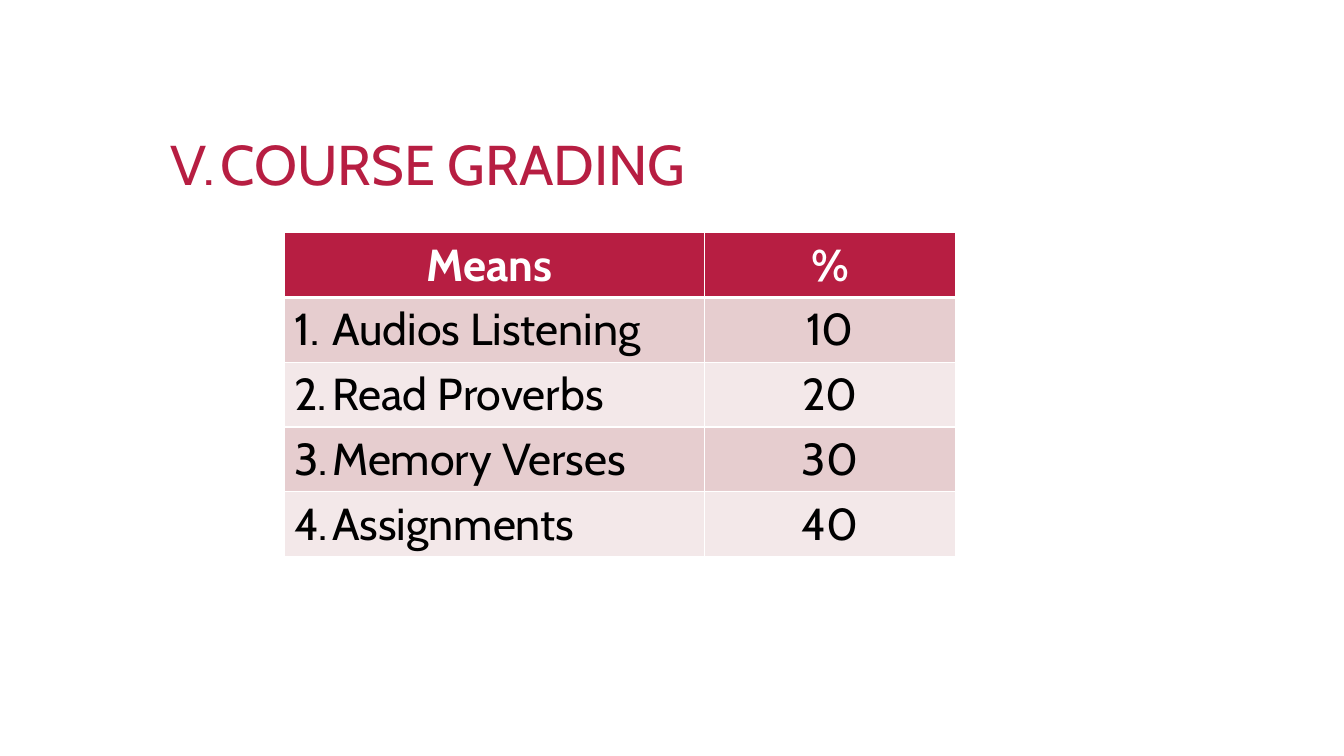
"""Build the course grading slide."""
from dataclasses import dataclass

from lxml import etree
from pptx import Presentation
from pptx.dml.color import RGBColor
from pptx.enum import text
from pptx.oxml import ns
from pptx.util import Pt

FONT = "Cabin"
CRIMSON = RGBColor(0xB7, 0x1E, 0x42)
ROSE = RGBColor(0xE6, 0xCD, 0xCF)
BLUSH = RGBColor(0xF3, 0xE8, 0xE9)
WHITE = RGBColor(0xFF, 0xFF, 0xFF)
BLACK = RGBColor(0, 0, 0)

COLUMN_WIDTHS = (300.24, 179.28)
ROW_HEIGHT = 46
NUMBER_INDENT = Pt(27)


@dataclass(frozen=True)
class GradingItem:
    means: str
    percent: int


ITEMS = (
    GradingItem("Audios Listening", 10),
    GradingItem("Read Proverbs", 20),
    GradingItem("Memory Verses", 30),
    GradingItem("Assignments", 40),
)


def format_runs(paragraph, size: float, color: RGBColor, bold: bool = False) -> None:
    for run in paragraph.runs:
        run.font.name = FONT
        run.font.size = Pt(size)
        run.font.bold = bold
        run.font.color.rgb = color


def set_borders(cell, bottom_width: float) -> None:
    properties = cell._tc.get_or_add_tcPr()
    widths = {"a:lnL": 1, "a:lnR": 1, "a:lnT": 1, "a:lnB": bottom_width}
    for position, (tag, width) in enumerate(widths.items()):
        line = etree.Element(ns.qn(tag), w=str(Pt(width)))
        fill = etree.SubElement(line, ns.qn("a:solidFill"))
        etree.SubElement(fill, ns.qn("a:srgbClr"), val=str(WHITE))
        properties.insert(position, line)


def fill_cell(cell, words: str, fill: RGBColor, color: RGBColor,
              header: bool = False, number: int = 0) -> None:
    cell.fill.solid()
    cell.fill.fore_color.rgb = fill
    set_borders(cell, 3 if header else 1)
    cell.text_frame.text = words
    paragraph = cell.text_frame.paragraphs[0]
    if number:
        properties = paragraph._p.get_or_add_pPr()
        properties.set("marL", str(NUMBER_INDENT))
        properties.set("indent", str(-NUMBER_INDENT))
        etree.SubElement(properties, ns.qn("a:buFont"), typeface="+mj-lt")
        etree.SubElement(properties, ns.qn("a:buAutoNum"),
                         type="arabicPeriod", startAt=str(number))
    else:
        paragraph.alignment = text.PP_ALIGN.CENTER
    format_runs(paragraph, 32, color, header)


def add_title(slide) -> None:
    title = slide.shapes.title
    title.left, title.top = Pt(114.48), Pt(92.88)
    title.width, title.height = Pt(756), Pt(53.28)
    frame = title.text_frame
    frame.text = "V.\tCOURSE GRADING"
    frame.auto_size = text.MSO_AUTO_SIZE.NONE
    frame.vertical_anchor = text.MSO_ANCHOR.MIDDLE
    paragraph = frame.paragraphs[0]
    paragraph.alignment = text.PP_ALIGN.LEFT
    paragraph.line_spacing = 0.9
    format_runs(paragraph, 40, CRIMSON)


def add_grading_table(slide) -> None:
    row_count = len(ITEMS) + 1
    table = slide.shapes.add_table(
        row_count, len(COLUMN_WIDTHS), Pt(203.04), Pt(166.32),
        Pt(sum(COLUMN_WIDTHS)), Pt(ROW_HEIGHT * row_count)).table
    for column, width in zip(table.columns, COLUMN_WIDTHS):
        column.width = Pt(width)
    for column, heading in enumerate(("Means ", "%")):
        fill_cell(table.cell(0, column), heading, CRIMSON, WHITE, header=True)
    for number, item in enumerate(ITEMS, start=1):
        fill = ROSE if number % 2 else BLUSH
        fill_cell(table.cell(number, 0), item.means, fill, BLACK, number=number)
        fill_cell(table.cell(number, 1), str(item.percent), fill, BLACK)


def main() -> None:
    presentation = Presentation()
    presentation.slide_width, presentation.slide_height = Pt(960), Pt(540)
    slide = presentation.slides.add_slide(presentation.slide_layouts[5])
    add_title(slide)
    add_grading_table(slide)
    presentation.save("out.pptx")


if __name__ == "__main__":
    main()
